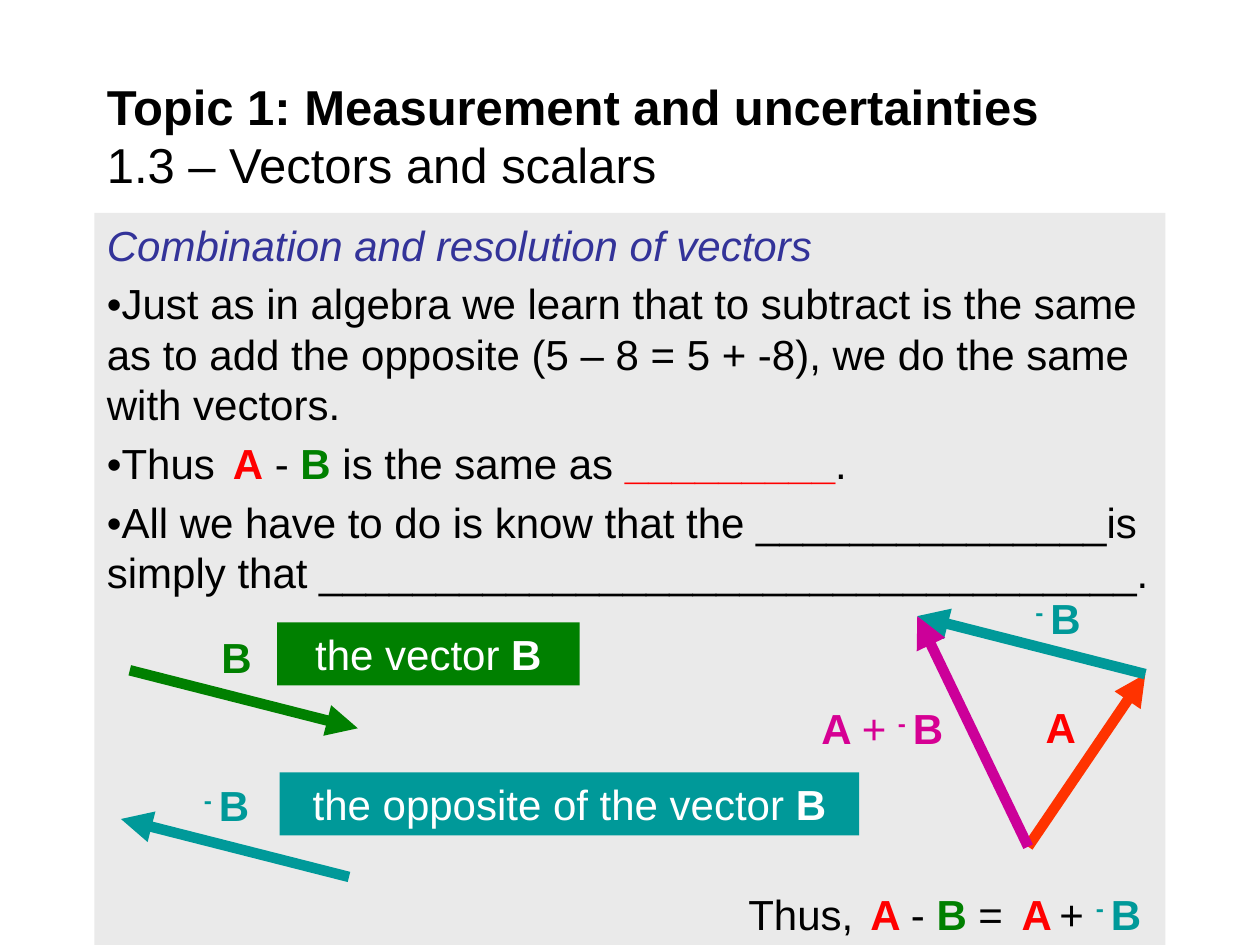
from lxml.etree import SubElement
from pptx import Presentation
from pptx.dml.color import RGBColor
from pptx.enum.shapes import MSO_CONNECTOR, MSO_SHAPE
from pptx.enum.text import MSO_ANCHOR, PP_ALIGN
from pptx.oxml.ns import qn
from pptx.util import Inches, Pt

BLACK = RGBColor(0x00, 0x00, 0x00)
WHITE = RGBColor(0xFF, 0xFF, 0xFF)
PANEL_GRAY = RGBColor(0xEA, 0xEA, 0xEA)
HEADING_BLUE = RGBColor(0x33, 0x33, 0x99)
RED = RGBColor(0xFF, 0x00, 0x00)
GREEN = RGBColor(0x00, 0x80, 0x00)
TEAL = RGBColor(0x00, 0x99, 0x99)
ORANGE = RGBColor(0xFF, 0x33, 0x00)
MAGENTA = RGBColor(0xCC, 0x00, 0x99)
PINK = RGBColor(0xD6, 0x00, 0x93)

BODY = {"name": "Arial", "size": Pt(24), "bold": False, "italic": False}
TITLE = {**BODY, "size": Pt(28)}
BOLD = {"bold": True}
ITALIC = {"italic": True}
RAISED = {"bold": True, "baseline": 30000}
LABEL_HEIGHT = 0.5

VECTOR_A = [("A", RED, BOLD)]
VECTOR_B = [("B", GREEN, BOLD)]
OPPOSITE_B = [("- ", TEAL, RAISED), ("B", TEAL, BOLD)]
A_PLUS_OPPOSITE_B = [("A ", PINK, BOLD), ("+ ", PINK, {}), ("- ", PINK, RAISED), ("B", PINK, BOLD)]


def write_runs(paragraph, runs, base=BODY):
    for text, color, extra in runs:
        if text == "\n":
            paragraph.add_line_break()
            continue
        run = paragraph.add_run()
        run.text = text
        run.font.color.rgb = color
        for name, value in {**base, **extra}.items():
            if name == "baseline":
                run._r.get_or_add_rPr().set(name, str(value))
            else:
                setattr(run.font, name, value)


def add_text(slide, left, top, width, height, runs, base=BODY, anchor=MSO_ANCHOR.TOP):
    shape = slide.shapes.add_textbox(Inches(left), Inches(top), Inches(width), Inches(height))
    frame = shape.text_frame
    frame.word_wrap = True
    frame.vertical_anchor = anchor
    write_runs(frame.paragraphs[0], runs, base)


def add_filled_box(slide, left, top, width, height, color):
    shape = slide.shapes.add_shape(
        MSO_SHAPE.RECTANGLE, Inches(left), Inches(top), Inches(width), Inches(height)
    )
    shape.shadow.inherit = False
    shape.fill.solid()
    shape.fill.fore_color.rgb = color
    shape.line.fill.background()
    shape.text_frame.word_wrap = True
    shape.text_frame.vertical_anchor = MSO_ANCHOR.TOP
    return shape


def add_arrow(slide, start, end, color):
    points = [Inches(value) for value in (*start, *end)]
    arrow = slide.shapes.add_connector(MSO_CONNECTOR.STRAIGHT, *points)
    arrow.line.color.rgb = color
    arrow.line.width = Pt(6)
    SubElement(arrow.line._get_or_add_ln(), qn("a:tailEnd"), type="triangle")
    SubElement(arrow._element.spPr, qn("a:effectLst"))


def add_title(slide, left, top, width, height):
    runs = [
        ("Topic 1: Measurement and uncertainties", BLACK, BOLD),
        ("\n", BLACK, {}),
        ("1.3 – Vectors and scalars", BLACK, {}),
    ]
    add_text(slide, left, top, width, height, runs, TITLE, MSO_ANCHOR.MIDDLE)


def add_explanation(slide, left, top, width, height):
    paragraphs = [
        [("Combination and resolution of vectors", HEADING_BLUE, ITALIC)],
        [("•Just as in algebra we learn that to subtract is the same as to add the opposite "
          "(5 – 8 = 5 + -8), we do the same with vectors.", BLACK, {})],
        [("•Thus\t", BLACK, {}), ("A", RED, BOLD), (" - ", BLACK, {}), ("B ", GREEN, BOLD),
         ("is the same as ", BLACK, {}), ("_" * 9, RED, BOLD), (".", BLACK, {})],
        [("•All we have to do is know that the " + "_" * 15 + "is simply that "
          + "_" * 35 + ".", BLACK, {})],
    ]
    frame = add_filled_box(slide, left, top, width, height, PANEL_GRAY).text_frame
    for index, runs in enumerate(paragraphs):
        paragraph = frame.add_paragraph() if index else frame.paragraphs[0]
        paragraph.alignment = PP_ALIGN.LEFT
        paragraph.space_before = Pt(4.8 if index else 0)
        write_runs(paragraph, runs)


def add_named_vector(slide, left, top, color, forward, label, label_box, caption, caption_box):
    ends = [(left, top), (left + 1.81, top + 0.46)]
    add_arrow(slide, *(ends if forward else ends[::-1]), color)
    x, y, width = label_box
    add_text(slide, left + x, top + y, width, LABEL_HEIGHT, label)
    x, y, width = caption_box
    box = add_filled_box(slide, left + x, top + y, width, LABEL_HEIGHT, color)
    paragraph = box.text_frame.paragraphs[0]
    paragraph.alignment = PP_ALIGN.CENTER
    write_runs(paragraph, [(caption, WHITE, {}), ("B", WHITE, BOLD)])


def add_triangle(slide, left, top):
    origin = (left + 0.88, top + 1.83)
    corner = (left + 1.81, top + 0.46)
    apex = (left, top)
    for start, end, color in [
        (origin, corner, ORANGE), (corner, apex, TEAL), (origin, apex, MAGENTA)
    ]:
        add_arrow(slide, start, end, color)
    for x, y, width, runs in [
        (0.92, 0.63, 0.47, VECTOR_A),
        (0.84, -0.24, 0.66, OPPOSITE_B),
        (-0.86, 0.64, 1.22, A_PLUS_OPPOSITE_B),
    ]:
        add_text(slide, left + x, top + y, width, LABEL_HEIGHT, runs)


def add_conclusion(slide, left, top):
    difference = [("A ", RED, BOLD), ("- ", BLACK, {}), ("B", GREEN, BOLD), (" =", BLACK, {})]
    for x, width, runs in [
        (0, 1.88, [("Thus,", BLACK, {})]),
        (0.97, 1.88, difference),
        (2.17, 0.44, VECTOR_A),
        (2.47, 0.46, [("+", BLACK, {})]),
        (2.76, 0.86, OPPOSITE_B),
    ]:
        add_text(slide, left + x, top, width, LABEL_HEIGHT, runs)


def main():
    presentation = Presentation()
    presentation.slide_width = Inches(10)
    presentation.slide_height = Inches(7.5)
    slide = presentation.slides.add_slide(presentation.slide_layouts[6])
    add_explanation(slide, 0.75, 1.69, 8.5, 5.81)
    add_title(slide, 0.75, 0.58, 8.5, 0.98)
    add_named_vector(slide, 1.03, 5.32, GREEN, True, VECTOR_B, (0.63, -0.36, 0.47),
                     "the vector ", (1.17, -0.38, 2.4))
    add_named_vector(slide, 0.96, 6.5, TEAL, False, OPPOSITE_B, (0.56, -0.36, 0.66),
                     "the opposite of the vector ", (1.26, -0.37, 4.6))
    add_triangle(slide, 7.28, 4.89)
    add_conclusion(slide, 5.84, 7)
    presentation.save("out.pptx")


if __name__ == "__main__":
    main()
